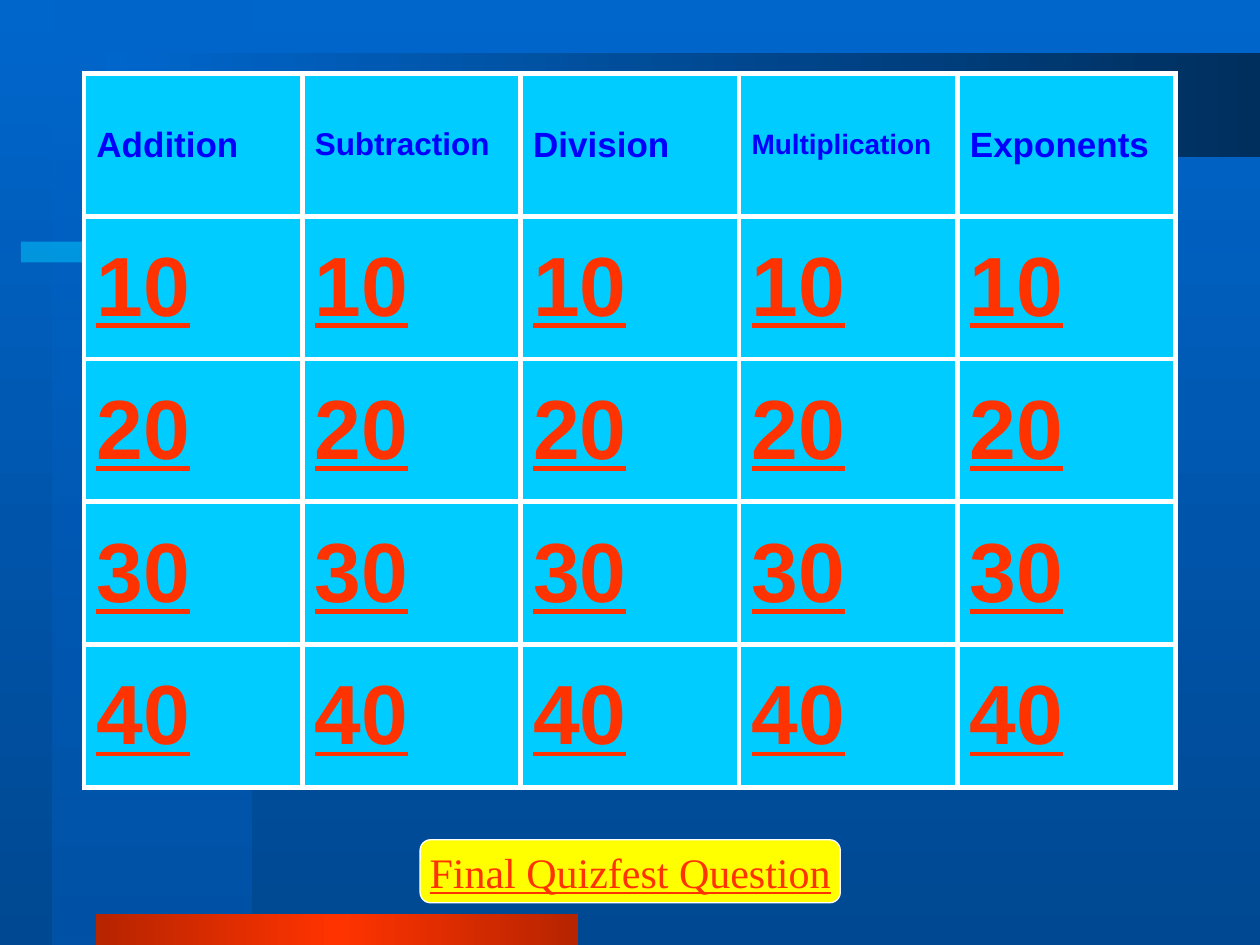
import dataclasses

import lxml.etree
import pptx
import pptx.dml.color
import pptx.enum.shapes
import pptx.enum.text
import pptx.oxml.ns
import pptx.util

Cm = pptx.util.Cm
Pt = pptx.util.Pt
qn = pptx.oxml.ns.qn


@dataclasses.dataclass(frozen=True)
class Theme:
    blue: str = "0066CC"
    cyan: str = "00CCFF"
    red: str = "FF3300"
    yellow: str = "FFFF00"
    white: str = "FFFFFF"
    heading: str = "0000FF"
    sans: str = "Arial"
    serif: str = "Times New Roman"
    points_size: int = 48
    button_size: int = 24
    border: float = 3
    outline: float = 0.75


THEME = Theme()
DOWN, RIGHT = 90, 0

# Column headings with their type sizes
CATEGORIES = [("Addition", 20), ("Subtraction", 18), ("Division", 20),
              ("Multiplication", 16), ("Exponents", 20)]
POINTS = [10, 20, 30, 40]


def rgb(color):
    return pptx.dml.color.RGBColor.from_string(color)


def add_xml(parent, tag, **attributes):
    element = lxml.etree.SubElement(parent, qn(tag))
    for name, value in attributes.items():
        element.set(name, str(value))
    return element


def set_gradient(fill, owner, stops, angle):
    """Each stop is (position, colour, modifiers), all in percent."""
    fill.gradient()
    gradient = owner.find(".//" + qn("a:gradFill"))
    stop_list = gradient.find(qn("a:gsLst"))
    for stop in list(stop_list):
        stop_list.remove(stop)
    for position, color, modifiers in stops:
        stop = add_xml(stop_list, "a:gs", pos=position * 1000)
        color_element = add_xml(stop, "a:srgbClr", val=color)
        for name, percent in modifiers.items():
            add_xml(color_element, "a:" + name, val=round(percent * 1000))
    gradient.find(qn("a:lin")).set("ang", str(angle * 60000))


def set_text(text_frame, text, *, size, font, color, bold=False,
             underline=False, align=pptx.enum.text.PP_ALIGN.LEFT):
    paragraph = text_frame.paragraphs[0]
    paragraph.alignment = align
    run = paragraph.add_run()
    run.text = text
    run.font.size = Pt(size)
    run.font.name = font
    run.font.bold = bold
    run.font.underline = underline
    run.font.color.rgb = rgb(color)


def add_block(slide, box, kind=pptx.enum.shapes.MSO_SHAPE.RECTANGLE):
    shape = slide.shapes.add_shape(kind, *map(Cm, box))
    shape.shadow.inherit = False
    shape.line.fill.background()
    return shape


def add_backdrop(slide, box):
    left, top, width, height = box
    set_gradient(slide.background.fill, slide.element,
                 [(0, THEME.blue, {}), (100, THEME.blue, {"shade": 46.28})], DOWN)

    # Tall panel on the left
    panel = add_block(slide, (left + 1.06, top, 4.02, height))
    set_gradient(panel.fill, panel.element,
                 [(0, THEME.blue, {"alpha": 50}),
                  (100, THEME.blue, {"shade": 63.5})], DOWN)

    # Translucent strip behind the board
    strip = add_block(slide, (left + 0.42, top + 4.87, 13.12, 0.42))
    strip.fill.solid()
    strip.fill.fore_color.rgb = rgb(THEME.cyan)
    color = strip.element.spPr.find(".//" + qn("a:srgbClr"))
    add_xml(color, "a:alpha", val=50000)

    # Red bar on the bottom edge
    bar = add_block(slide, (left + 1.93, top + height - 0.63, 9.72, 0.63))
    dark_red = {"shade": 46.28}
    set_gradient(bar.fill, bar.element,
                 [(0, THEME.red, dark_red), (50, THEME.red, {}),
                  (100, THEME.red, dark_red)], RIGHT)

    # Dark band running to the right edge
    band = add_block(slide, (left + 2.13, top + 1.06, width - 2.13, 2.11))
    set_gradient(band.fill, band.element,
                 [(0, THEME.blue, {}), (100, THEME.blue, {"shade": 16.9})], RIGHT)


def format_cell(cell, text, **text_format):
    cell.vertical_anchor = pptx.enum.text.MSO_ANCHOR.MIDDLE
    set_text(cell.text_frame, text, font=THEME.sans, bold=True, **text_format)
    properties = cell._tc.get_or_add_tcPr()
    for side in ("L", "R", "T", "B"):
        line = add_xml(properties, "a:ln" + side, w=Pt(THEME.border))
        add_xml(add_xml(line, "a:solidFill"), "a:srgbClr", val=THEME.white)
    cell.fill.solid()
    cell.fill.fore_color.rgb = rgb(THEME.cyan)


def add_board(slide, box):
    rows, columns = len(POINTS) + 1, len(CATEGORIES)
    table = slide.shapes.add_table(rows, columns, *map(Cm, box)).table
    table.first_row = False
    table.horz_banding = False
    for column, (category, size) in enumerate(CATEGORIES):
        format_cell(table.cell(0, column), category, size=size,
                    color=THEME.heading)
        for row, points in enumerate(POINTS, start=1):
            format_cell(table.cell(row, column), str(points),
                        size=THEME.points_size, color=THEME.red,
                        underline=True)


def add_final_button(slide, box):
    button = add_block(slide, box, pptx.enum.shapes.MSO_SHAPE.ROUNDED_RECTANGLE)
    button.fill.solid()
    button.fill.fore_color.rgb = rgb(THEME.yellow)
    button.line.color.rgb = rgb(THEME.white)
    button.line.width = Pt(THEME.outline)
    button.text_frame.word_wrap = False
    button.text_frame.vertical_anchor = pptx.enum.text.MSO_ANCHOR.MIDDLE
    set_text(button.text_frame, "Final Quizfest Question",
             size=THEME.button_size, font=THEME.serif, color=THEME.red,
             underline=True, align=pptx.enum.text.PP_ALIGN.CENTER)


def main():
    presentation = pptx.Presentation()
    presentation.slide_width = Cm(25.4)
    presentation.slide_height = Cm(19.05)
    slide = presentation.slides.add_slide(presentation.slide_layouts[6])
    add_backdrop(slide, (0, 0, 25.4, 19.05))
    add_final_button(slide, (8.47, 16.93, 8.47, 1.27))
    add_board(slide, (1.69, 1.48, 22.01, 14.39))
    presentation.save("out.pptx")


if __name__ == "__main__":
    main()
